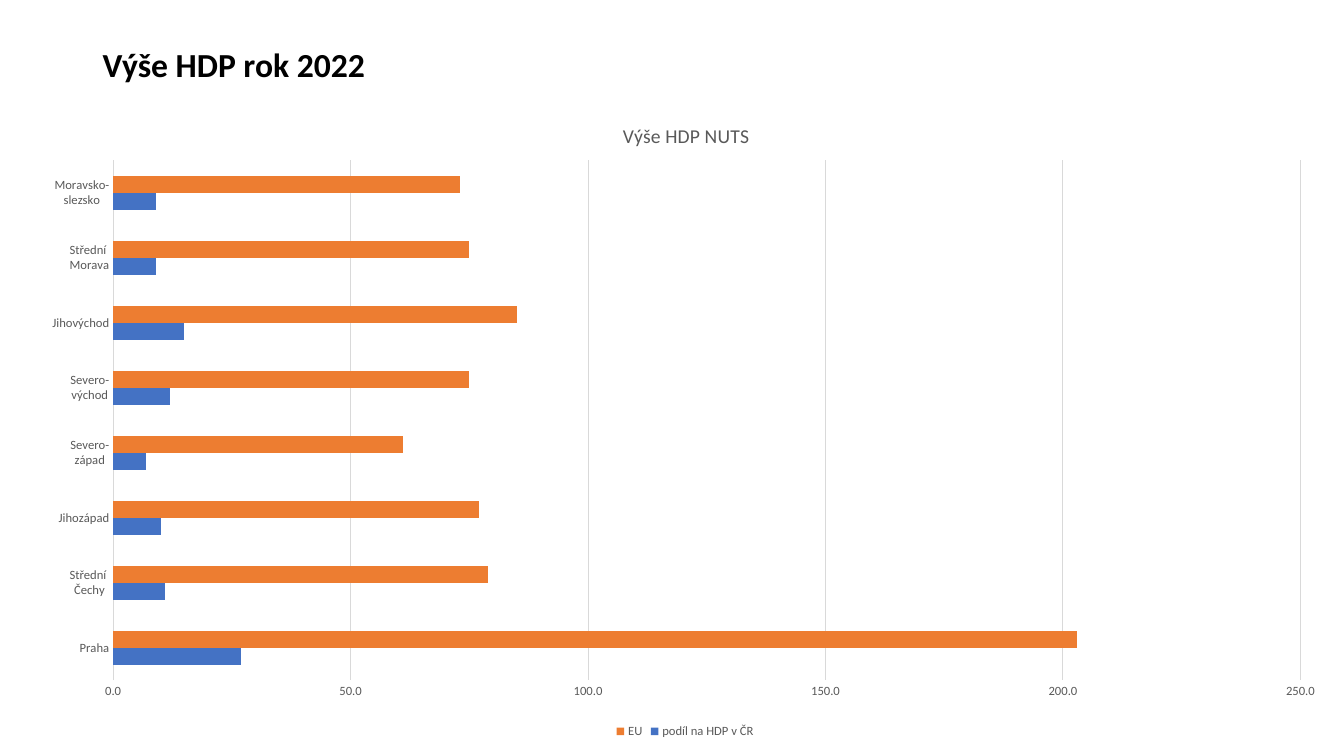
from lxml import etree
from pptx import Presentation
from pptx.chart.data import CategoryChartData
from pptx.dml.color import RGBColor
from pptx.enum.chart import XL_CHART_TYPE, XL_LEGEND_POSITION, XL_TICK_MARK
from pptx.enum.text import MSO_ANCHOR
from pptx.oxml.ns import qn
from pptx.util import Inches, Pt

BAR_CLUSTERED = XL_CHART_TYPE.BAR_CLUSTERED
LEGEND_BOTTOM = XL_LEGEND_POSITION.BOTTOM
NO_TICK = XL_TICK_MARK.NONE
MIDDLE = MSO_ANCHOR.MIDDLE

FONT = "Calibri"
COLORS = {
    "black": "000000",
    "label": "595959",
    "grid": "D9D9D9",
    "share": "4472C4",
    "eu": "ED7D31",
}
NUMBER_FORMAT = r"#\ ##0.0_ ;\-#\ ##0.0\ "
REGIONS = [
    "Praha", "Střední \nČechy", "Jihozápad", "Severo-\nzápad",
    "Severo-\nvýchod", "Jihovýchod", "Střední \nMorava", "Moravsko-\nslezsko",
]
SERIES = [
    ("podíl na HDP v ČR", "share", [27, 11, 10, 7, 12, 15, 9, 9]),
    ("EU", "eu", [203, 79, 77, 61, 75, 85, 75, 73]),
]


def color(name):
    return RGBColor.from_string(COLORS[name])


def style_font(font, size, color_name, bold=False):
    font.name = FONT
    font.size = Pt(size)
    font.bold = bold
    font.color.rgb = color(color_name)


def style_line(line):
    line.color.rgb = color("grid")
    line.width = Pt(0.75)


def set_layout(parent, position, **settings):
    """Place a chart part by fractions of the chart area."""
    for old_layout in parent.findall(qn("c:layout")):
        parent.remove(old_layout)
    layout = etree.Element(qn("c:layout"))
    manual = etree.SubElement(layout, qn("c:manualLayout"))
    for tag, value in settings.items():
        etree.SubElement(manual, qn("c:" + tag)).set("val", str(value))
    parent.insert(position, layout)


def add_title(slide, text):
    shape = slide.shapes.add_textbox(Inches(0.92), Inches(0.4), Inches(11.5), Inches(0.52))
    frame = shape.text_frame
    frame.word_wrap = True
    frame.vertical_anchor = MIDDLE
    frame.text = text
    paragraph = frame.paragraphs[0]
    paragraph.line_spacing = 0.9
    style_font(paragraph.runs[0].font, 24, "black", bold=True)


def style_axes(chart):
    category_axis, value_axis = chart.category_axis, chart.value_axis
    for axis in (category_axis, value_axis):
        axis.major_tick_mark = NO_TICK
        axis.minor_tick_mark = NO_TICK
        style_font(axis.tick_labels.font, 9, "label")
    style_line(category_axis.format.line)
    value_axis.format.line.fill.background()
    value_axis.minimum_scale = 0
    value_axis.maximum_scale = 250
    value_axis.major_unit = 50
    value_axis.has_major_gridlines = True
    style_line(value_axis.major_gridlines.format.line)
    value_axis.tick_labels.number_format = NUMBER_FORMAT
    value_axis.tick_labels.number_format_is_linked = False


def add_chart_title(chart, text):
    chart.has_title = True
    title = chart.chart_title
    title.text_frame.text = text
    style_font(title.text_frame.paragraphs[0].runs[0].font, 14, "label")
    title.include_in_layout = False
    set_layout(title._element, 1, xMode="edge", yMode="edge", x=0.45, y=0.04)


def add_bar_chart(slide):
    data = CategoryChartData(number_format=NUMBER_FORMAT)
    data.categories = REGIONS
    for name, _, values in SERIES:
        data.add_series(name, values)
    chart = slide.shapes.add_chart(
        BAR_CLUSTERED, Inches(0.26), Inches(0.92), Inches(13.07), Inches(6.45), data
    ).chart
    style_font(chart.font, 10, "black")

    # Bars
    plot = chart.plots[0]
    plot.gap_width = 182
    plot.overlap = 0
    plot.vary_by_categories = False
    for series, (_, color_name, _) in zip(plot.series, SERIES):
        series.format.fill.solid()
        series.format.fill.fore_color.rgb = color(color_name)

    # Axes, title and legend
    style_axes(chart)
    add_chart_title(chart, "Výše HDP NUTS")
    chart.has_legend = True
    chart.legend.position = LEGEND_BOTTOM
    chart.legend.include_in_layout = False
    style_font(chart.legend.font, 9, "label")

    # Plot area
    plot_area = chart._chartSpace.find(".//" + qn("c:plotArea"))
    set_layout(plot_area, 0, layoutTarget="inner", xMode="edge", yMode="edge",
               x=0.066, y=0.104, w=0.901, h=0.8)


def main():
    presentation = Presentation()
    presentation.slide_width = Inches(13.33)
    presentation.slide_height = Inches(7.5)
    slide = presentation.slides.add_slide(presentation.slide_layouts[6])
    add_title(slide, "Výše HDP rok 2022")
    add_bar_chart(slide)
    presentation.save("out.pptx")


if __name__ == "__main__":
    main()
